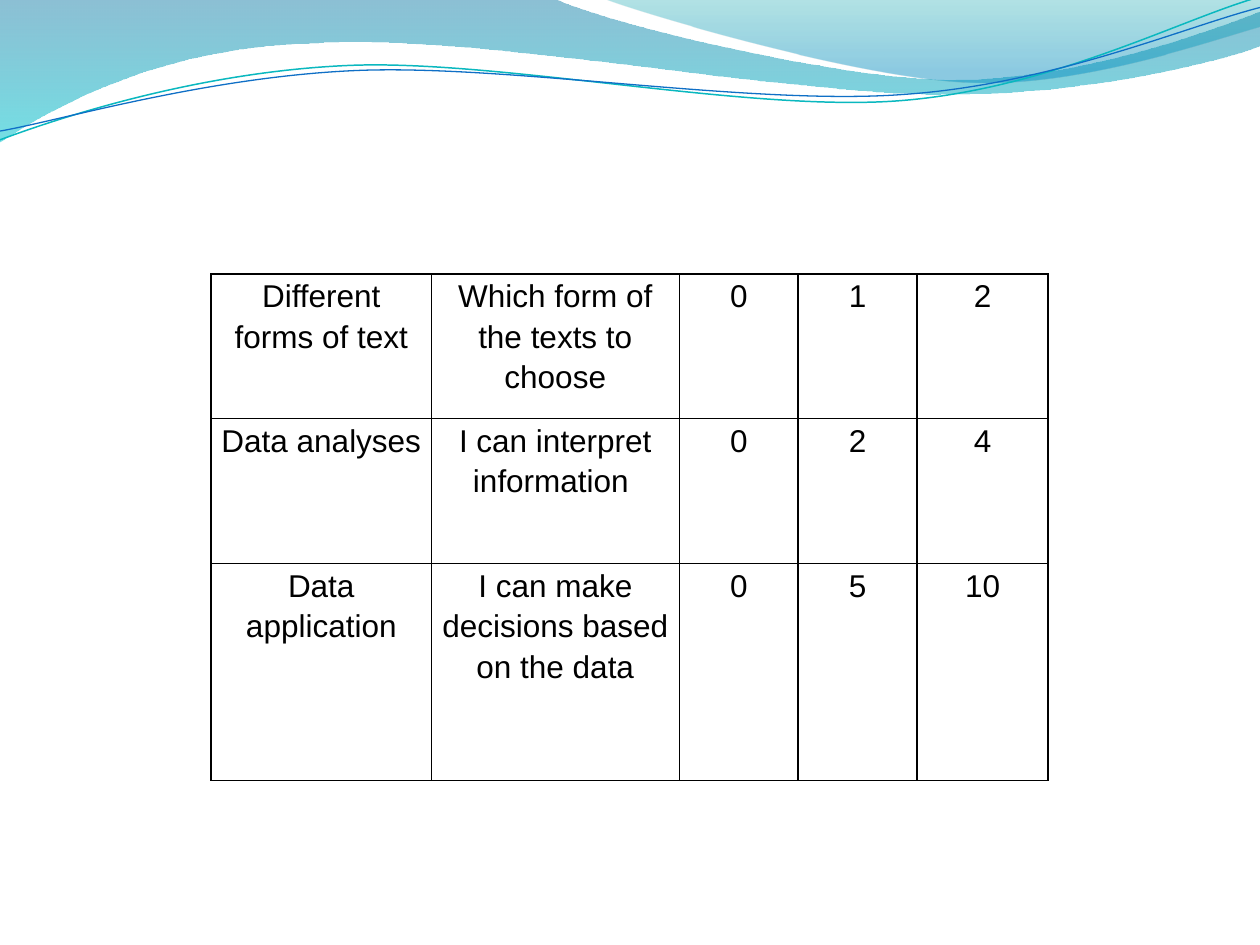
"""Build a slide with a wave header and a scoring table for data skills."""
from math import cos, radians, sin

from lxml import etree
from pptx import Presentation
from pptx.dml.color import RGBColor
from pptx.enum.text import MSO_ANCHOR, PP_ALIGN
from pptx.oxml.ns import qn
from pptx.util import Pt

CENTER = PP_ALIGN.CENTER
TOP = MSO_ANCHOR.TOP
BLANK_LAYOUT = 6
STRAND_TILT = 2.7

COLORS = {
    "text": "000000",
    "border": "000000",
    "deep_blue": "0074A1",
    "aqua": "00C6CF",
    "teal": "00A1A9",
    "sky": "008BBF",
    "teal_line": "0AB8BF",
    "blue_line": "0F6FC6",
}

BANDS = [
    {
        "start": (0, 0),
        "segments": [
            [(316.8, -0.7)],
            [(342.7, 12.2), (478.1, 45.4), (545.8, 45.4)],
            [(614.2, 45.4), (689.8, 18.7), (720, 6.5)],
            [(720.7, 25.9)],
            [(707.8, 31.7), (626.4, 54.7), (537.1, 54)],
            [(447.8, 54), (275, 20.2), (185, 24.5)],
            [(92.9, 25.9), (33.1, 59.8), (-0.7, 81.4)],
        ],
        "stops": [(0, "deep_blue", 45), (1, "aqua", 55)],
    },
    {
        "start": (344.9, -0.7),
        "segments": [
            [(366.5, 7.9), (491, 44.6), (553.7, 46.8)],
            [(616.3, 49.7), (691.9, 23), (720, 15.1)],
            [(720, 0)],
        ],
        "stops": [(0, "teal", 30), (0.8, "sky", 45)],
    },
]

STRANDS = [
    {
        "start": (0, 79.9),
        "segments": [
            [(34.6, 67), (113.8, 41), (199.4, 37.4)],
            [(284.4, 33.8), (427, 64.1), (513.4, 57.6)],
            [(599.8, 51.1), (675.4, 10.8), (718.6, -1.4)],
        ],
        "center": (359.3, 41.4),
        "color": "teal_line",
        "width": 0.85,
    },
    {
        "start": (0, 74.9),
        "segments": [
            [(33.8, 69.1), (118.1, 43.9), (203.8, 40.3)],
            [(290.2, 36.7), (429.8, 60.5), (516.2, 54)],
            [(601.9, 48.2), (677.5, 15.1), (720, 4.3)],
        ],
        "center": (359.6, 42.5),
        "color": "blue_line",
        "width": 0.75,
    },
]

TABLE_LEFT, TABLE_TOP = 120.7, 156.5
COLUMN_WIDTHS = [125.8, 141.7, 68, 68, 74.9]
ROW_HEIGHTS = [82.7, 82.7, 124]
SCORES = [
    ["Different forms of text", "Which form of the texts to choose", "0", "1", "2"],
    ["Data analyses", "I can interpret information ", "0", "2", "4"],
    ["Data application", "I can make decisions based on the data", "0", "5", "10"],
]

CELL_FORMAT = {
    "margin_left": Pt(5),
    "margin_right": Pt(5),
    "margin_top": Pt(0),
    "margin_bottom": Pt(0),
    "vertical_anchor": TOP,
}
PARAGRAPH_FORMAT = {"alignment": CENTER, "line_spacing": 1.15}
FONT_FORMAT = {"name": "Arial", "size": Pt(18), "bold": False}


def rgb(name):
    """Return the named colour."""
    return RGBColor.from_string(COLORS[name])


def apply_format(target, values):
    """Set each attribute in values on the target."""
    for name, value in values.items():
        setattr(target, name, value)


def turn(point, center):
    """Turn a point clockwise about a center by the strand tilt."""
    angle = radians(STRAND_TILT)
    dx, dy = point[0] - center[0], point[1] - center[1]
    return (
        center[0] + dx * cos(angle) - dy * sin(angle),
        center[1] + dx * sin(angle) + dy * cos(angle),
    )


def add_outline(shapes, start, segments, close):
    """Add a freeform whose three-point segments are cubic curves."""
    points = [(Pt(x), Pt(y)) for segment in segments for x, y in segment]
    builder = shapes.build_freeform(Pt(start[0]), Pt(start[1]))
    builder.add_line_segments(points, close=close)
    shape = builder.convert_to_shape()
    shape.shadow.inherit = False
    steps = iter(list(shape.element.iter(qn("a:lnTo"))))
    for segment in segments:
        parts = [next(steps) for _ in segment]
        if len(parts) == 3:
            curve = etree.Element(qn("a:cubicBezTo"))
            parts[0].addprevious(curve)
            for part in parts:
                curve.append(part[0])
                part.getparent().remove(part)
    return shape


def add_band(shapes, start, segments, stops):
    """Add a closed band with a translucent vertical gradient."""
    band = add_outline(shapes, start, segments, True)
    band.line.fill.background()
    band.fill.gradient()
    band.fill.gradient_angle = 270
    for stop, (position, color, _) in zip(band.fill.gradient_stops, stops):
        stop.position = position
        stop.color.rgb = rgb(color)
    tints = band.element.spPr.iter(qn("a:srgbClr"))
    for tint, (_, _, opacity) in zip(tints, stops):
        etree.SubElement(tint, qn("a:alpha"), val=str(opacity * 1000))


def add_strand(shapes, start, segments, center, color, width):
    """Add an open curved line, laid level and then tilted."""
    level = [[turn(point, center) for point in segment] for segment in segments]
    strand = add_outline(shapes, turn(start, center), level, False)
    strand.rotation = -STRAND_TILT
    strand.fill.background()
    strand.line.color.rgb = rgb(color)
    strand.line.width = Pt(width)


def add_borders(cell):
    """Draw a thin line on all four sides of a cell."""
    properties = cell._tc.get_or_add_tcPr()
    for index, side in enumerate(("lnL", "lnR", "lnT", "lnB")):
        border = etree.Element(qn(f"a:{side}"), w=str(Pt(1)))
        fill = etree.SubElement(border, qn("a:solidFill"))
        etree.SubElement(fill, qn("a:srgbClr"), val=COLORS["border"])
        properties.insert(index, border)


def fill_cell(cell, text):
    """Write and format the text of one cell."""
    cell.text = text
    cell.fill.background()
    apply_format(cell, CELL_FORMAT)
    para = cell.text_frame.paragraphs[0]
    apply_format(para, PARAGRAPH_FORMAT)
    font = para.runs[0].font
    apply_format(font, FONT_FORMAT)
    font.color.rgb = rgb("text")
    add_borders(cell)


def add_score_table(shapes):
    """Add the table of skills and scores."""
    size = Pt(sum(COLUMN_WIDTHS)), Pt(sum(ROW_HEIGHTS))
    table = shapes.add_table(3, 5, Pt(TABLE_LEFT), Pt(TABLE_TOP), *size).table
    apply_format(table, {"first_row": False, "horz_banding": False})
    for column, width in zip(table.columns, COLUMN_WIDTHS):
        column.width = Pt(width)
    for row, height, texts in zip(table.rows, ROW_HEIGHTS, SCORES):
        row.height = Pt(height)
        for cell, text in zip(row.cells, texts):
            fill_cell(cell, text)


def main():
    """Build and save the deck."""
    deck = Presentation()
    apply_format(deck, {"slide_width": Pt(720), "slide_height": Pt(540)})
    shapes = deck.slides.add_slide(deck.slide_layouts[BLANK_LAYOUT]).shapes
    for band in BANDS:
        add_band(shapes, **band)
    for strand in STRANDS:
        add_strand(shapes, **strand)
    add_score_table(shapes)
    deck.save("out.pptx")


if __name__ == "__main__":
    main()
